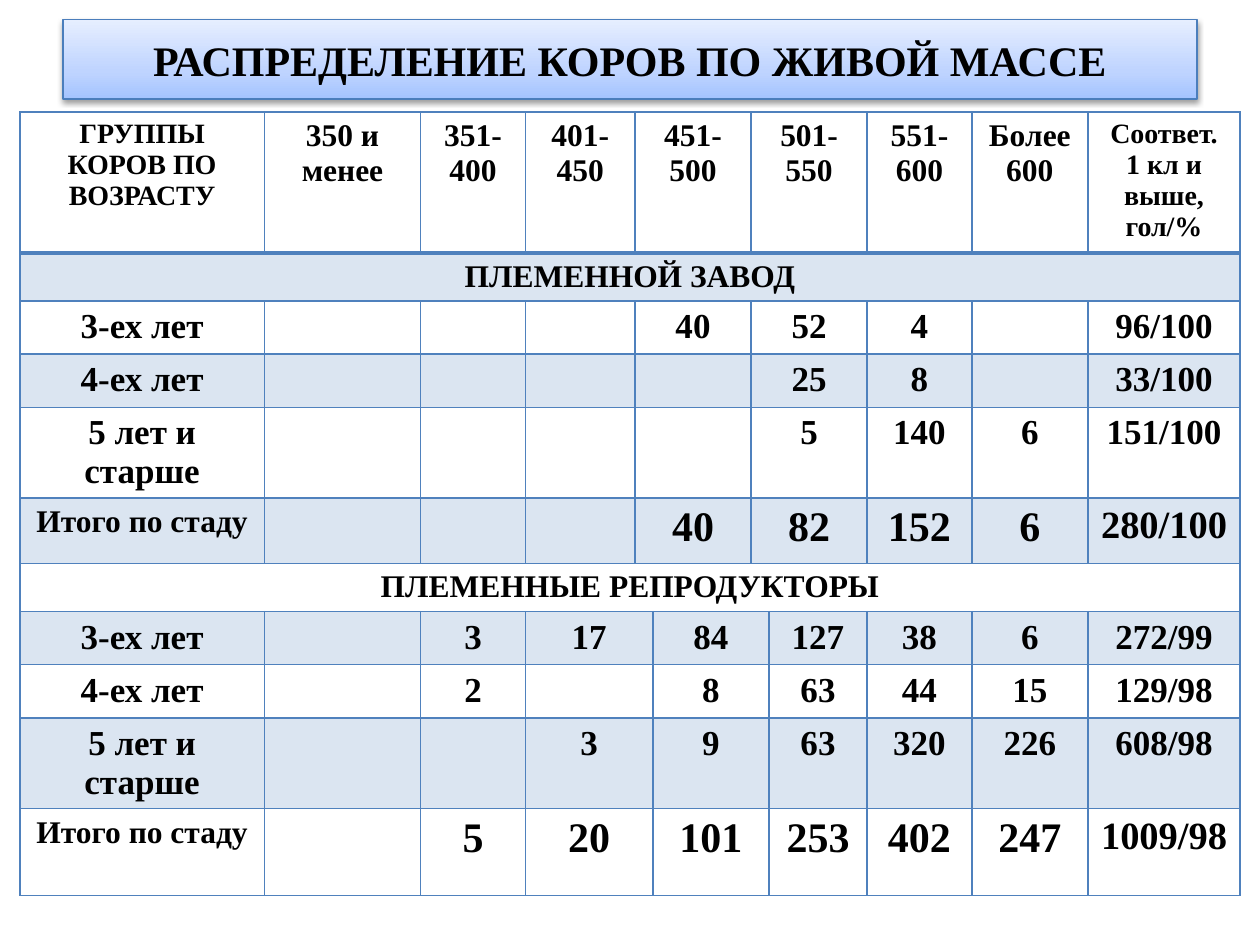
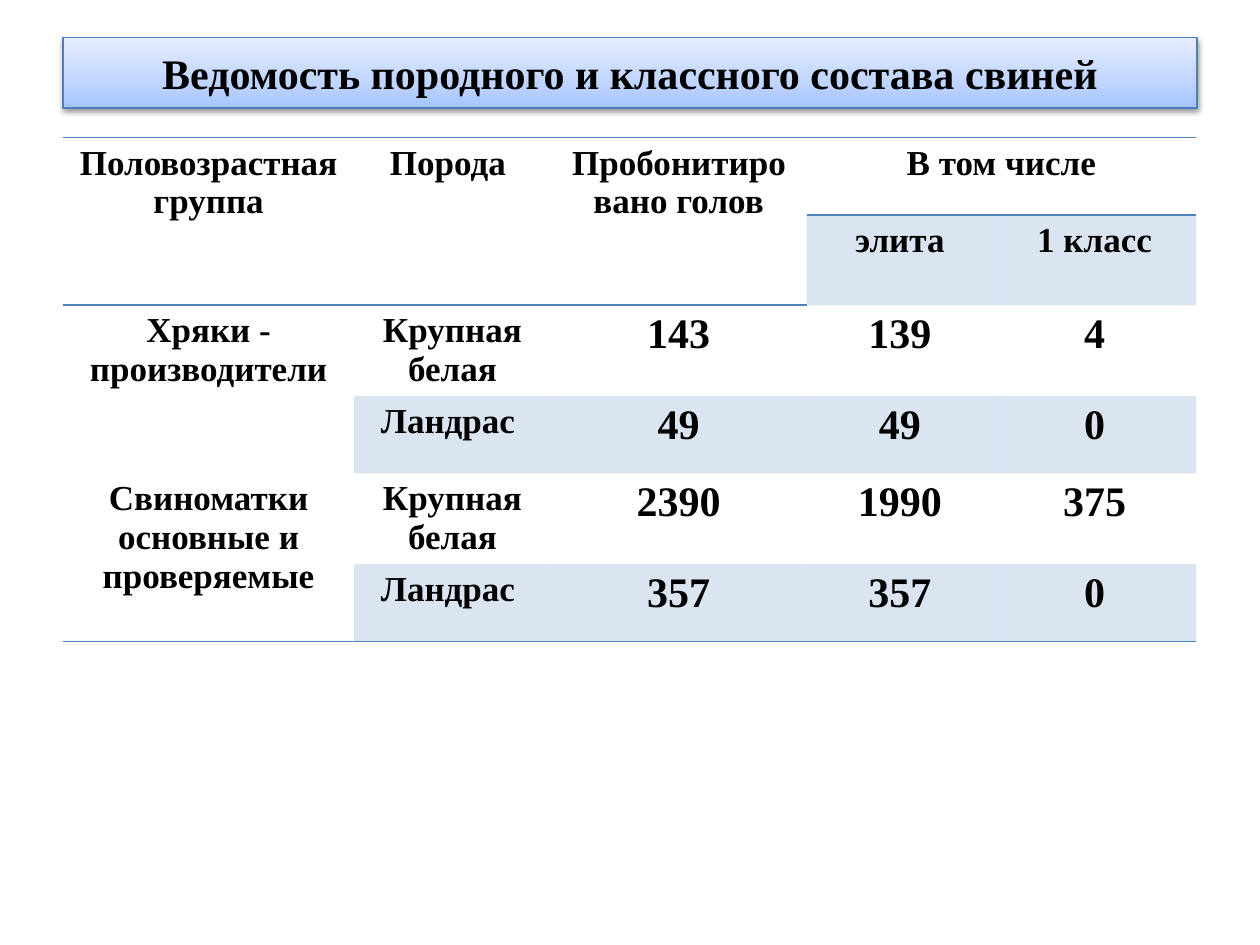
from lxml.etree import SubElement
from pptx import Presentation
from pptx.dml.color import RGBColor
from pptx.enum.shapes import MSO_SHAPE
from pptx.enum.text import MSO_ANCHOR, PP_ALIGN
from pptx.oxml import parse_xml
from pptx.oxml.ns import nsdecls, qn
from pptx.util import Cm, Pt

rgb = RGBColor.from_string
BLACK = "000000"
ACCENT = "4F81BD"
TITLE_LINE = "4B7EBC"
TITLE_STOPS = [(0, "A4C4FF"), (35, "BFD4FF"), (100, "E6EEFF")]
TITLE_SHADOW = (
    f'<a:effectLst {nsdecls("a")}><a:outerShdw blurRad="40000" dist="20000" dir="5400000" '
    f'rotWithShape="0"><a:srgbClr val="{BLACK}"><a:alpha val="38000"/></a:srgbClr>'
    '</a:outerShdw></a:effectLst>'
)
PLAIN_TABLE_STYLE = "{2D5ABB26-0587-4C30-8999-92F81FD0307C}"
BOX_EDGES = {"L": 1, "R": 1, "T": 1, "B": 1}

deck = Presentation()
deck.slide_width, deck.slide_height = Cm(25.4), Cm(19.05)


def add_titled_table(title, title_top, title_height, left, top, widths, heights):
    """Add a page with the title band and an empty unstyled table; return the table."""
    page = deck.slides.add_slide(deck.slide_layouts[6])
    band = page.shapes.add_shape(
        MSO_SHAPE.RECTANGLE, Cm(1.27), Cm(title_top), Cm(22.86), Cm(title_height))
    band.fill.gradient()
    band.fill.gradient_angle = 90
    stops = band._element.spPr.find(".//" + qn("a:gsLst"))
    for stop in list(stops):
        stops.remove(stop)
    for position, colour in TITLE_STOPS:
        stop = SubElement(stops, qn("a:gs"), pos=str(position * 1000))
        SubElement(stop, qn("a:srgbClr"), val=colour)
    band.line.color.rgb = rgb(TITLE_LINE)
    band.line.width = Pt(0.75)
    band._element.spPr.append(parse_xml(TITLE_SHADOW))
    band.text_frame.word_wrap = True
    band.text_frame.vertical_anchor = MSO_ANCHOR.MIDDLE
    write(band.text_frame, title, 24)

    frame = page.shapes.add_table(
        len(heights), len(widths), Cm(left), Cm(top), Cm(sum(widths)), Cm(sum(heights)))
    table = frame.table
    table._tbl.tblPr.find(qn("a:tableStyleId")).text = PLAIN_TABLE_STYLE
    for column, width in zip(table.columns, widths):
        column.width = Cm(width)
    for row, height in zip(table.rows, heights):
        row.height = Cm(height)
    return table


def write(target, text, size, edges=None, shaded=False):
    """Write centred bold text; for a table cell also draw its edges and fill."""
    frame = target
    if edges is not None:
        frame = target.text_frame
        properties = target._tc.get_or_add_tcPr()
        for side, width in edges.items():
            line = SubElement(properties, qn("a:ln" + side), w=str(Pt(width)))
            SubElement(SubElement(line, qn("a:solidFill")), qn("a:srgbClr"), val=ACCENT)
        if shaded:
            target.fill.solid()
            target.fill.fore_color.rgb = rgb(ACCENT)
            colour = properties.find(qn("a:solidFill")).find(qn("a:srgbClr"))
            SubElement(colour, qn("a:alpha"), val="20000")
        else:
            target.fill.background()
    para = frame.paragraphs[0]
    para.alignment = PP_ALIGN.CENTER
    if text:
        span = para.add_run()
        span.text = text
        for name, value in {"name": "Times New Roman", "size": Pt(size), "bold": True}.items():
            setattr(span.font, name, value)
        span.font.color.rgb = rgb(BLACK)


# Cows by live weight: the two halves of the table split the grid differently
FARM = (0, 1, 2, 3, 4, 6, 8, 9, 10)
BREEDERS = (0, 1, 2, 3, 5, 7, 8, 9, 10)
WHOLE_ROW = (0,)
# Text sizes of the first, middle and last cells in a row
HEADER, SECTION, AGE, TOTAL = (16, 18, 16), (18, 18, 18), (20, 20, 20), (18, 24, 22)
cow_rows = [
    (FARM, HEADER, ["ГРУППЫ КОРОВ ПО ВОЗРАСТУ", "350 и менее", "351-400", "401-450", "451-500",
                    "501-550", "551-600", "Более 600", "Соответ. 1 кл и выше, гол/%"]),
    (WHOLE_ROW, SECTION, ["ПЛЕМЕННОЙ ЗАВОД"]),
    (FARM, AGE, ["3-ех лет", "", "", "", "40", "52", "4", "", "96/100"]),
    (FARM, AGE, ["4-ех лет", "", "", "", "", "25", "8", "", "33/100"]),
    (FARM, AGE, ["5 лет и старше", "", "", "", "", "5", "140", "6", "151/100"]),
    (FARM, TOTAL, ["Итого по стаду", "", "", "", "40", "82", "152", "6", "280/100"]),
    (WHOLE_ROW, SECTION, ["ПЛЕМЕННЫЕ РЕПРОДУКТОРЫ"]),
    (BREEDERS, AGE, ["3-ех лет", "", "3", "17", "84", "127", "38", "6", "272/99"]),
    (BREEDERS, AGE, ["4-ех лет", "", "2", "", "8", "63", "44", "15", "129/98"]),
    (BREEDERS, AGE, ["5 лет и старше", "", "", "3", "9", "63", "320", "226", "608/98"]),
    (BREEDERS, TOTAL, ["Итого по стаду", "", "5", "20", "101", "253", "402", "247", "1009/98"]),
]
cows = add_titled_table(
    "РАСПРЕДЕЛЕНИЕ КОРОВ ПО ЖИВОЙ МАССЕ", 0.4, 1.6, 0.4, 2.26,
    [4.93, 3.15, 2.11, 2.21, 0.36, 1.98, 0.36, 1.98, 2.11, 2.34, 3.07],
    [2.84, 0.97, 1.07, 1.07, 1.83, 1.32, 0.97, 1.07, 1.07, 1.83, 1.75])
last_column = len(cows.columns) - 1
for row, (starts, (first_size, middle_size, last_size), texts) in enumerate(cow_rows):
    edges = {**BOX_EDGES, "B": 2} if row == 0 else BOX_EDGES
    ends = [start - 1 for start in starts[1:]] + [last_column]
    for start, end, text in zip(starts, ends, texts):
        if end > start:
            cows.cell(row, start).merge(cows.cell(row, end))
        size = {0: first_size, last_column: last_size}.get(start, middle_size)
        for column in range(start, end + 1):
            shown = text if column == start else ""
            write(cows.cell(row, column), shown, size, edges, shaded=row % 2 == 1)

# Pigs by breed and class: None marks a cell covered by a merged one
pig_rows = [
    ["Половозрастная группа", "Порода ", "Пробонитировано голов", "В том числе", None],
    [None, None, None, "элита", "1 класс"],
    ["Хряки - производители", "Крупная белая", "143", "139", "4"],
    [None, "Ландрас ", "49", "49", "0"],
    ["Свиноматки основные и проверяемые", "Крупная белая", "2390", "1990", "375"],
    [None, "Ландрас ", "357", "357", "0"],
]
pigs = add_titled_table(
    "Ведомость породного и классного состава свиней", 0.76, 1.42, 1.27, 2.77,
    [5.87, 3.96, 5.16, 3.76, 4.09], [1.56, 1.8, 1.83, 1.56, 1.83, 1.56])
for row, column in [(0, 0), (0, 1), (0, 2), (2, 0), (4, 0)]:
    pigs.cell(row, column).merge(pigs.cell(row + 1, column))
pigs.cell(0, 3).merge(pigs.cell(0, 4))
for row, texts in enumerate(pig_rows):
    for column, text in enumerate(texts):
        edges = {"T": 1} if row == 0 else {}
        if row in (0, 5) or (row == 1 and column < 3) or (row, column) == (4, 0):
            edges["B"] = 1
        size = 24 if text and text.isdigit() else 20
        shaded = row % 2 == 1 and text is not None
        write(pigs.cell(row, column), text, size, edges, shaded)

deck.save("out.pptx")
